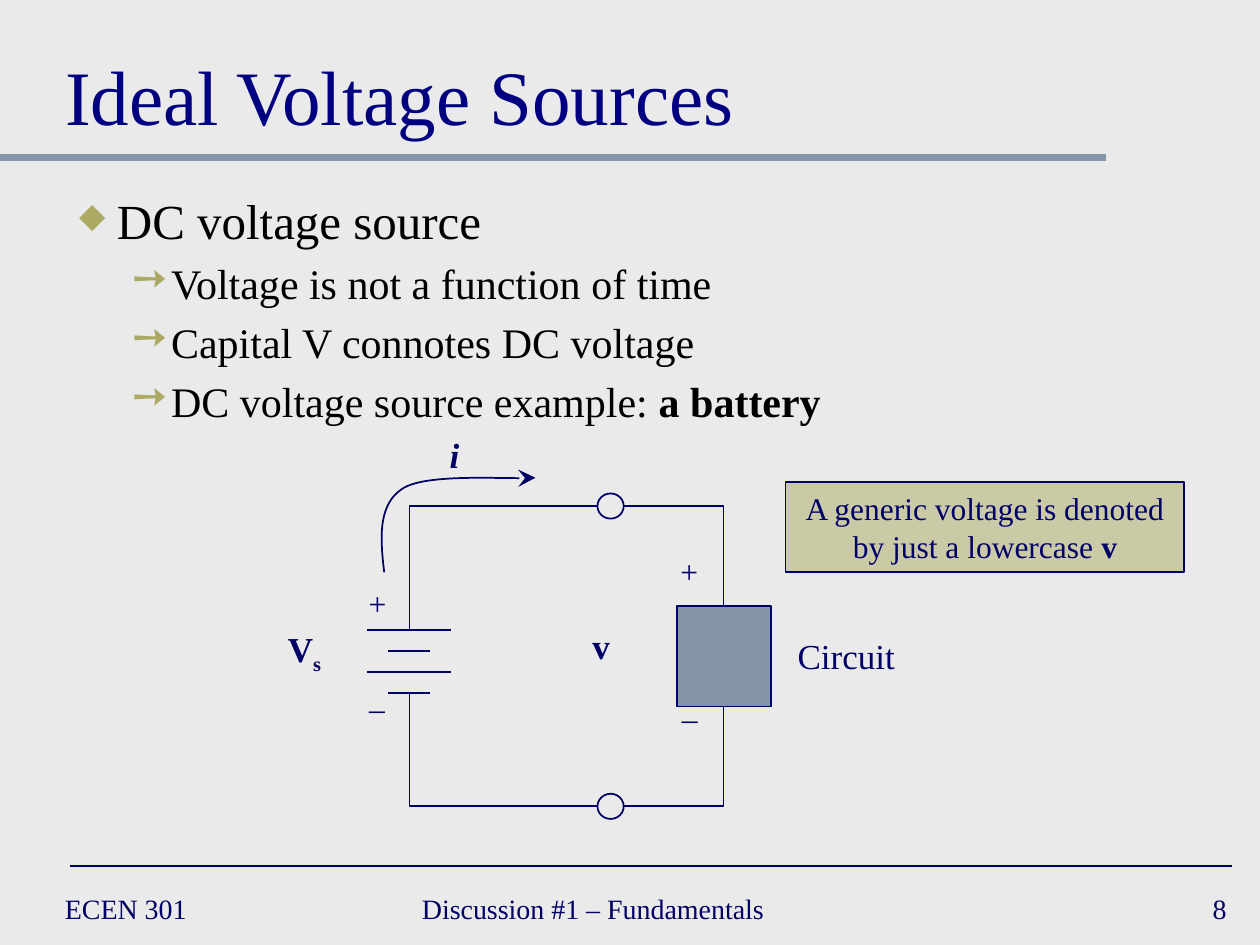
from typing import NamedTuple

from lxml.etree import SubElement
from pptx import Presentation
from pptx.dml.color import RGBColor
from pptx.enum.shapes import MSO_CONNECTOR, MSO_SHAPE
from pptx.enum.text import MSO_ANCHOR, MSO_AUTO_SIZE, PP_ALIGN
from pptx.oxml.ns import qn
from pptx.util import Inches, Pt

FONT = "Times New Roman"
NAVY, TITLE_BLUE, SLATE = "000066", "000080", "8495A9"
OLIVE, KHAKI, BLACK, PAPER = "ACA964", "AEAB66", "000000", "EAEAEA"
CELL = Inches(10) / 120  # the slide is a grid of 120 columns by 90 rows


class Area(NamedTuple):
    col: float
    row: float
    cols: float
    rows: float


class Point(NamedTuple):
    col: float
    row: float


class Label(NamedTuple):
    words: str
    area: Area
    size: int = 18
    bold: bool = False
    italic: bool = False
    align: PP_ALIGN = PP_ALIGN.CENTER
    anchor: MSO_ANCHOR = MSO_ANCHOR.TOP
    wrap: bool = False


class Bullet(NamedTuple):
    words: str
    strong: str
    level: int
    size: int
    mark: str
    mark_percent: int
    margin: float
    hang: float


def grid(*lengths: float) -> list[int]:
    return [round(length * CELL) for length in lengths]


def color(hex_text: str) -> RGBColor:
    return RGBColor.from_string(hex_text)


def style_font(font, size: float, ink: str = NAVY) -> None:
    font.name, font.size, font.color.rgb = FONT, Pt(size), color(ink)


def style_line(line, ink: str = NAVY, width: float = 1) -> None:
    line.color.rgb, line.width = color(ink), Pt(width)


def add_label(page, label: Label):
    box = page.shapes.add_textbox(*grid(*label.area))
    frame = box.text_frame
    frame.word_wrap, frame.vertical_anchor = label.wrap, label.anchor
    if not label.wrap:
        frame.auto_size = MSO_AUTO_SIZE.SHAPE_TO_FIT_TEXT
    para = frame.paragraphs[0]
    para.text, para.alignment = label.words, label.align
    style_font(para.font, label.size)
    para.font.bold, para.font.italic = label.bold, label.italic
    return para


def add_line(page, start: Point, end: Point, ink: str = NAVY, width: float = 1,
             kind: MSO_CONNECTOR = MSO_CONNECTOR.STRAIGHT):
    line = page.shapes.add_connector(kind, *grid(*start, *end))
    style_line(line.line, ink, width)
    SubElement(line._element.spPr, qn("a:effectLst"))
    return line


def add_wire(page, start: Point, end: Point, vertical_first: bool) -> None:
    wire = add_line(page, start, end, kind=MSO_CONNECTOR.ELBOW)
    geometry = wire._element.spPr.find(qn("a:prstGeom"))
    if vertical_first:
        guides = geometry.find(qn("a:avLst"))
        SubElement(guides, qn("a:gd"), name="adj1", fmla="val 0")
    else:
        geometry.set("prst", "bentConnector2")


def add_outline(page, kind: MSO_SHAPE, area: Area, fill: str | None = None):
    shape = page.shapes.add_shape(kind, *grid(*area))
    shape.shadow.inherit = False
    style_line(shape.line)
    if fill:
        shape.fill.solid()
        shape.fill.fore_color.rgb = color(fill)
    else:
        shape.fill.background()
    return shape


def add_bullet(para, bullet: Bullet) -> None:
    para.level = bullet.level
    properties = para._p.get_or_add_pPr()
    properties.set("marL", str(Inches(bullet.margin)))
    properties.set("indent", str(-Inches(bullet.hang)))
    tint = SubElement(properties, qn("a:buClr"))
    SubElement(tint, qn("a:srgbClr"), val=OLIVE)
    SubElement(properties, qn("a:buSzPct"), val=str(bullet.mark_percent * 1000))
    SubElement(properties, qn("a:buChar"), char=bullet.mark)
    style_font(para.font, bullet.size, BLACK)
    para.add_run().text = bullet.words
    if bullet.strong:
        span = para.add_run()
        span.text, span.font.bold = bullet.strong, True


def curve(points: list[Point], steps: int = 24) -> list[list[int]]:
    """Points along a cubic curve with four control points."""
    def at(t: float) -> list[int]:
        weights = ((1 - t) ** 3, 3 * t * (1 - t) ** 2, 3 * t * t * (1 - t), t ** 3)
        return grid(*(sum(w * v for w, v in zip(weights, axis)) for axis in zip(*points)))
    return [at(step / steps) for step in range(steps + 1)]


def add_frame(page) -> None:
    add_line(page, Point(0, 15), Point(105.3, 15), SLATE, 4)
    add_line(page, Point(6.7, 82.5), Point(117.3, 82.5))
    title = page.shapes.title
    title.left, title.top, title.width, title.height = grid(5, 2, 110, 12)
    title.text_frame.vertical_anchor = MSO_ANCHOR.BOTTOM
    para = title.text_frame.paragraphs[0]
    para.text, para.alignment = "Ideal Voltage Sources", PP_ALIGN.LEFT
    style_font(para.font, 44, TITLE_BLUE)
    for words, col, cols, align in (("ECEN 301", 5, 26, PP_ALIGN.LEFT),
                                    ("Discussion #1 – Fundamentals", 39, 46, PP_ALIGN.LEFT),
                                    ("8", 93, 25, PP_ALIGN.RIGHT)):
        add_label(page, Label(words, Area(col, 84, cols, 5), 16, align=align,
                              anchor=MSO_ANCHOR.MIDDLE, wrap=True))


def add_points(page) -> None:
    box = page.shapes.add_textbox(*grid(5.4, 17.55, 109.6, 24.5))
    frame = box.text_frame
    frame.word_wrap = True
    add_bullet(frame.paragraphs[0],
               Bullet("DC voltage source", "", 0, 28, "◆", 70, 0.38, 0.3))
    for words, strong in (("Voltage is not a function of time", ""),
                          ("Capital V connotes DC voltage", ""),
                          ("DC voltage source example: ", "a battery")):
        para = frame.add_paragraph()
        para.space_before = Pt(4.8)
        add_bullet(para, Bullet(words, strong, 1, 24, "➙", 100, 0.81, 0.31))


def add_circuit(page) -> None:
    # Wires, terminals and the load
    battery, load, top, bottom = 39, 68.9, 48.2, 76.8
    left, right = 56.9, 59.4
    for row, plate, load_side in ((top, 60, 57.7), (bottom, 66, 67.3)):
        add_wire(page, Point(battery, plate), Point(left, row), True)
        add_wire(page, Point(right, row), Point(load, load_side), False)
        add_outline(page, MSO_SHAPE.OVAL, Area(left, row - 1.2, right - left, 2.4))
    add_outline(page, MSO_SHAPE.RECTANGLE, Area(64.5, 57.7, 8.9, 9.6), SLATE)

    # Battery plates, long and short in turn
    for index in range(4):
        half, row = (4, 2)[index % 2], 60 + 2 * index
        add_line(page, Point(battery - half, row), Point(battery + half, row))

    # Current arrow
    bend = Point(38.4, 46.5)
    rise = curve([Point(36.6, 54.5), Point(36.2, 51.2), Point(36, 48), bend])
    run = curve([bend, Point(40.8, 45), Point(48.7, 45.7), Point(51, 45.5)])
    builder = page.shapes.build_freeform(*rise[0])
    builder.add_line_segments(rise[1:] + run[1:], close=False)
    current = builder.convert_to_shape()
    current.shadow.inherit = False
    current.fill.background()
    style_line(current.line)
    SubElement(current.line._get_or_add_ln(), qn("a:tailEnd"),
               type="stealth", w="lg", len="lg")

    # Labels
    for label in (Label("v", Area(55.2, 58.9, 4.1, 5.2), 20, bold=True),
                  Label("+", Area(63.6, 52, 4.1, 4.8)),
                  Label("_", Area(63.7, 64.9, 4, 4.8)),
                  Label("+", Area(33.9, 55, 4.1, 4.8)),
                  Label("_", Area(33.9, 64, 4, 4.8)),
                  Label("i", Area(41.6, 40.7, 3.4, 5.2), 20, bold=True, italic=True),
                  Label("Circuit", Area(74.6, 59.8, 12, 5.2), 20)):
        add_label(page, label)
    source = add_label(page, Label("V", Area(26.2, 59.2, 5.6, 5.2), 20, bold=True))
    span = source.add_run()
    span.text = "s"
    span.font._element.set("baseline", "-25000")


def add_note(page) -> None:
    note = add_outline(page, MSO_SHAPE.RECTANGLE, Area(74.8, 45.9, 38, 8.6), KHAKI)
    tint = note._element.spPr.find(qn("a:solidFill")).find(qn("a:srgbClr"))
    SubElement(tint, qn("a:alpha"), val="50000")
    note.text_frame.word_wrap = True
    para = note.text_frame.paragraphs[0]
    para.alignment = PP_ALIGN.CENTER
    style_font(para.font, 18)
    para.add_run().text = "A generic voltage is denoted by just a lowercase "
    span = para.add_run()
    span.text, span.font.bold = "v", True


def main() -> None:
    deck = Presentation()
    deck.slide_width, deck.slide_height = grid(120, 90)
    page = deck.slides.add_slide(deck.slide_layouts[5])
    page.background.fill.solid()
    page.background.fill.fore_color.rgb = color(PAPER)
    for draw in (add_frame, add_points, add_circuit, add_note):
        draw(page)
    deck.save("out.pptx")


if __name__ == "__main__":
    main()
